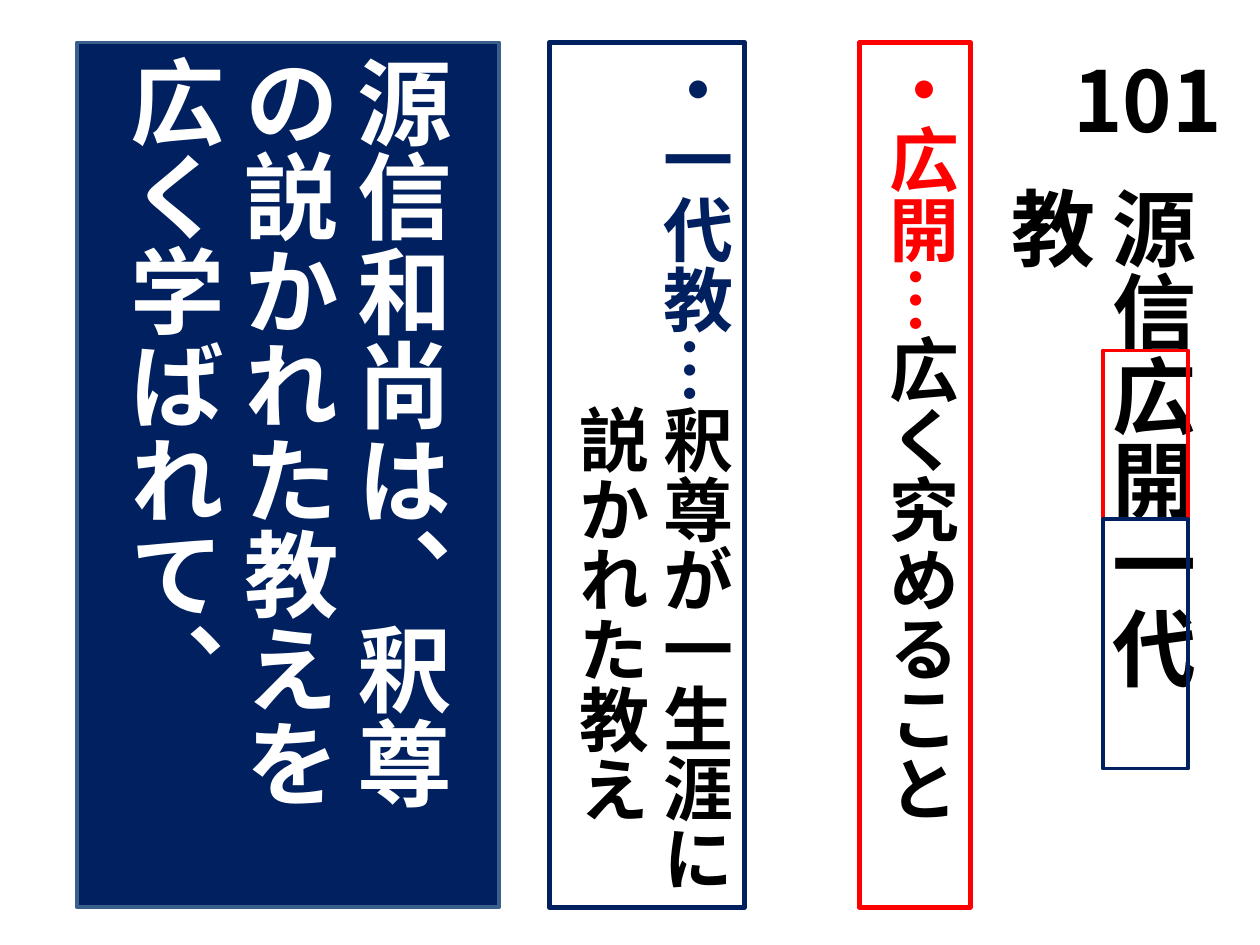
from lxml import etree
from pptx import Presentation
from pptx.dml.color import RGBColor
from pptx.enum.shapes import MSO_SHAPE
from pptx.enum.text import MSO_ANCHOR, MSO_AUTO_SIZE, PP_ALIGN
from pptx.oxml.ns import qn
from pptx.util import Inches, Pt

RECT = MSO_SHAPE.RECTANGLE
TOP, MIDDLE = MSO_ANCHOR.TOP, MSO_ANCHOR.MIDDLE
GROW, FIXED = MSO_AUTO_SIZE.SHAPE_TO_FIT_TEXT, MSO_AUTO_SIZE.NONE
LEFT = PP_ALIGN.LEFT
BLACK = RGBColor(0x00, 0x00, 0x00)
WHITE = RGBColor(0xFF, 0xFF, 0xFF)
RED = RGBColor(0xFF, 0x00, 0x00)
NAVY = RGBColor(0x00, 0x20, 0x60)
STEEL = RGBColor(0x3A, 0x5F, 0x8C)
FONT = "Noto Sans CJK JP"
WIDTH, HEIGHT = Inches(10), Inches(7.5)
PANEL_TOP, PANEL_HEIGHT = 0.045, 0.915


def share(box, x, y, w, h):
    left, top, width, height = box
    return (round(left + x * width), round(top + y * height),
            round(w * width), round(h * height))


def add_rect(slide, box, fill=None, line=None, weight=2.08):
    sp = slide.shapes.add_shape(RECT, *box)
    sp.shadow.inherit = False
    if fill is None:
        sp.fill.background()
    else:
        sp.fill.solid()
        sp.fill.fore_color.rgb = fill
    if line is None:
        sp.line.fill.background()
    else:
        sp.line.color.rgb = line
        sp.line.width = Pt(weight)
    return sp


def write(sp, paragraphs, size, vertical=True, anchor=TOP, auto_size=GROW):
    tf = sp.text_frame
    tf.word_wrap = True
    tf.auto_size = auto_size
    tf.vertical_anchor = anchor
    if vertical:
        tf._txBody.bodyPr.set("vert", "eaVert")
    for i, (indent, runs) in enumerate(paragraphs):
        p = tf.add_paragraph() if i else tf.paragraphs[0]
        p.alignment = LEFT
        if indent:
            pPr = p._p.get_or_add_pPr()
            pPr.set("marL", str(Pt(size * indent)))
            pPr.set("indent", "0")
        p.font.size = Pt(size)
        p.font.bold = True
        p.font.name = FONT
        defaults = p._p.pPr.find(qn("a:defRPr"))
        etree.SubElement(defaults, qn("a:ea"), typeface=FONT)
        for text, color in runs:
            r = p.add_run()
            r.text = text
            r.font.color.rgb = color


def add_heading(slide, box, number, phrase):
    title = add_rect(slide, share(box, 0.1, 0.18, 0.64, 0.82), WHITE)
    write(title, [(0, [(phrase, BLACK)])], 48)
    label = add_rect(slide, share(box, 0, 0, 1, 0.16), WHITE)
    write(label, [(0, [(number, BLACK)])], 48, vertical=False)
    for y, h, color in ((0.42, 0.23, RED), (0.65, 0.34, NAVY)):
        add_rect(slide, share(box, 0.21, y, 0.43, h), line=color)


def add_definition(slide, box, color, term, meaning, continuation=None):
    sp = add_rect(slide, box, WHITE, color, 3)
    paragraphs = [(0, [(term, color), (meaning, BLACK)])]
    if continuation:
        paragraphs.append((len(term), [(continuation, BLACK)]))
    write(sp, paragraphs, 40)


def add_translation(slide, box, text):
    sp = add_rect(slide, box, NAVY, STEEL)
    write(sp, [(0, [(text, WHITE)])], 54, anchor=MIDDLE, auto_size=FIXED)


def main():
    prs = Presentation()
    prs.slide_width, prs.slide_height = WIDTH, HEIGHT
    slide = prs.slides.add_slide(prs.slide_layouts[6])
    page = (0, 0, WIDTH, HEIGHT)

    def column(x, w, h=PANEL_HEIGHT):
        return share(page, x, PANEL_TOP, w, h)

    add_heading(slide, column(0.842, 0.158, 0.776), "101", "源信広開一代教")
    add_definition(slide, column(0.682, 0.088), RED, "・広開…", "広く究めること")
    add_definition(slide, column(0.436, 0.155), NAVY, "・一代教…",
                   "釈尊が一生涯に", "説かれた教え")
    add_translation(slide, column(0.061, 0.335),
                    "源信和尚は、釈尊の説かれた教えを広く学ばれて、")
    prs.save("out.pptx")


if __name__ == "__main__":
    main()
